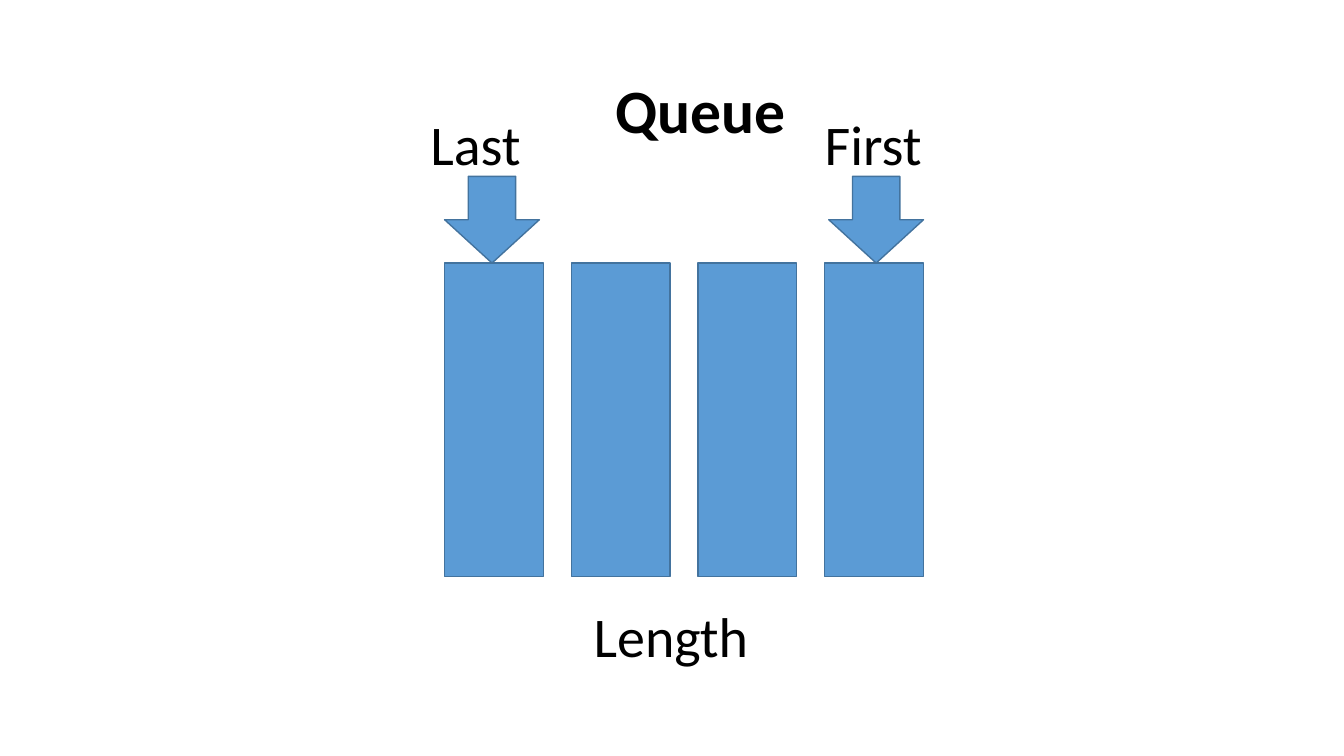
from dataclasses import dataclass

import pptx
import pptx.dml.color
import pptx.enum.shapes
import pptx.enum.text
import pptx.util
from pptx.util import Inches


@dataclass(frozen=True)
class Theme:
    font: str = "Calibri"
    text: str = "000000"
    fill: str = "5B9BD5"
    line: str = "43739E"
    title_size: int = 44
    label_size: int = 40
    line_width: int = 1


THEME = Theme()
SHAPES = pptx.enum.shapes.MSO_SHAPE


def color(value):
    return pptx.dml.color.RGBColor.from_string(value)


def format_text(frame, size, bold=False):
    for para in frame.paragraphs:
        for span in para.runs:
            span.font.name = THEME.font
            span.font.size = pptx.util.Pt(size)
            span.font.bold = bold
            span.font.color.rgb = color(THEME.text)


def set_title(page, text):
    title = page.shapes.title
    title.left, title.top = Inches(0.92), Inches(0.4)
    title.width, title.height = Inches(11.5), Inches(1.45)
    frame = title.text_frame
    frame.text = text
    frame.margin_left = Inches(5.18)
    frame.vertical_anchor = pptx.enum.text.MSO_ANCHOR.MIDDLE
    para = frame.paragraphs[0]
    para.alignment = pptx.enum.text.PP_ALIGN.LEFT
    para.line_spacing = 0.9
    format_text(frame, THEME.title_size, bold=True)


def add_block(page, kind, left, top, width, height):
    shape = page.shapes.add_shape(
        kind, Inches(left), Inches(top), Inches(width), Inches(height))
    shape.shadow.inherit = False
    shape.fill.solid()
    shape.fill.fore_color.rgb = color(THEME.fill)
    shape.line.color.rgb = color(THEME.line)
    shape.line.width = pptx.util.Pt(THEME.line_width)


def add_label(page, text, left, top, width):
    box = page.shapes.add_textbox(
        Inches(left), Inches(top), Inches(width), Inches(0.77))
    frame = box.text_frame
    frame.text = text
    frame.word_wrap = False
    frame.auto_size = pptx.enum.text.MSO_AUTO_SIZE.SHAPE_TO_FIT_TEXT
    format_text(frame, THEME.label_size)


def main():
    deck = pptx.Presentation()
    deck.slide_width, deck.slide_height = Inches(13.33), Inches(7.5)
    page = deck.slides.add_slide(deck.slide_layouts.get_by_name("Title Only"))
    set_title(page, "Queue")

    first_left, pitch = 4.41, 1.256
    for index in range(4):
        add_block(page, SHAPES.RECTANGLE,
                  first_left + index * pitch, 2.61, 0.98, 3.11)

    for arrow_left in (4.41, 8.22):
        add_block(page, SHAPES.DOWN_ARROW, arrow_left, 1.75, 0.94, 0.86)

    add_label(page, "First", 8.08, 1.04, 1.17)
    add_label(page, "Last", 4.17, 1.04, 1.11)
    add_label(page, "Length", 5.79, 5.92, 1.75)
    deck.save("out.pptx")


if __name__ == "__main__":
    main()
